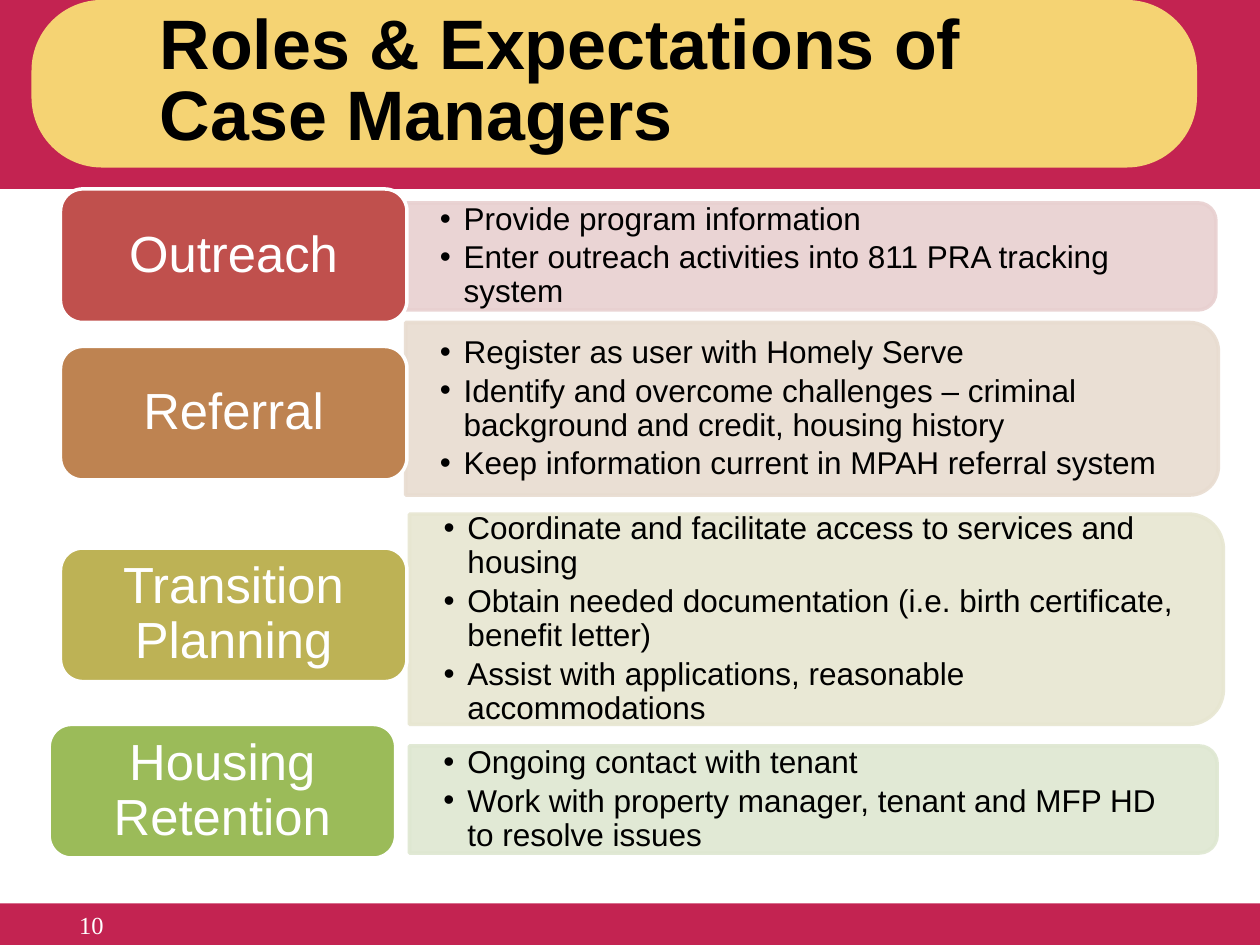
import pptx
import pptx.util
import pptx.dml.color
import pptx.enum.shapes
import pptx.enum.text
import lxml.etree

Inches, Pt = pptx.util.Inches, pptx.util.Pt
SHAPE = pptx.enum.shapes.MSO_SHAPE
ALIGN = pptx.enum.text.PP_ALIGN
ANCHOR = pptx.enum.text.MSO_ANCHOR
qn = pptx.oxml.ns.qn

COLORS = {"band": "C32351", "banner": "F5D373", "white": "FFFFFF", "black": "000000"}
TITLE = "Roles & Expectations of Case Managers"
PAGE = "10"
ROLES = [
    {"name": "Outreach", "color": "C0504D", "tint": "E8D0D0",
     "label": (0.48, 1.5), "panel": (3.22, 1.61, 6.43, 0.85),
     "duties": ["Provide program information",
                "Enter outreach activities into 811 PRA tracking system"]},
    {"name": "Referral", "color": "BE8351", "tint": "E8DCD0",
     "label": (0.48, 2.75), "panel": (3.22, 2.56, 6.45, 1.37),
     "duties": ["Register as user with Homely Serve",
                "Identify and overcome challenges – criminal background and credit, housing history",
                "Keep information current in MPAH referral system"]},
    {"name": "Transition Planning", "color": "BDB255", "tint": "E7E6D1",
     "label": (0.48, 4.35), "panel": (3.25, 4.08, 6.46, 1.67),
     "duties": ["Coordinate and facilitate access to services and housing",
                "Obtain needed documentation (i.e. birth certificate, benefit letter)",
                "Assist with applications, reasonable accommodations"]},
    {"name": "Housing Retention", "color": "9BBB59", "tint": "DEE7D1",
     "label": (0.39, 5.75), "panel": (3.25, 5.92, 6.41, 0.85),
     "duties": ["Ongoing contact with tenant",
                "Work with property manager, tenant and MFP HD to resolve issues"]},
]
LABEL_W, LABEL_H = 2.75, 1.06

prs = pptx.Presentation()
prs.slide_width, prs.slide_height = Inches(10), Inches(7.5)
s = prs.slides.add_slide(prs.slide_layouts[6])


def rgb(color):
    return pptx.dml.color.RGBColor.from_string(color)


def add_shape(kind, box, fill, line=None):
    sp = s.shapes.add_shape(kind, *map(Inches, box))
    sp.shadow.inherit = False
    sp.fill.solid()
    sp.fill.fore_color.rgb = rgb(fill)
    if line:
        sp.line.color.rgb = rgb(line)
        sp.line.width = Pt(2)
    else:
        sp.line.fill.background()
    return sp


def add_panel(box, tint):
    x, y, w, h = box
    upright = (x + (w - h) / 2, y + (h - w) / 2, h, w)
    sp = add_shape(SHAPE.ROUND_2_SAME_RECTANGLE, upright, tint, tint)
    sp.rotation = 90
    for color in sp._element.spPr.iter(qn("a:srgbClr")):
        lxml.etree.SubElement(color, qn("a:alpha"), val="90000")


def add_bullet(p):
    pPr = p._p.get_or_add_pPr()
    pPr.set("marL", str(Inches(0.19)))
    pPr.set("indent", str(-Inches(0.19)))
    lxml.etree.SubElement(pPr, qn("a:buFont"), typeface="Arial")
    lxml.etree.SubElement(pPr, qn("a:buChar"), char="•")


def write(sp, lines, size, color, font="Arial", bold=False, align=ALIGN.LEFT,
          anchor=ANCHOR.MIDDLE, inset=(0.1, 0.05), spacing=None, after=0, bullets=False):
    tf = sp.text_frame
    tf.word_wrap = True
    tf.vertical_anchor = anchor
    tf.margin_left = tf.margin_right = Inches(inset[0])
    tf.margin_top = tf.margin_bottom = Inches(inset[1])
    for i, line in enumerate(lines):
        p = tf.add_paragraph() if i else tf.paragraphs[0]
        p.alignment = align
        p.line_spacing = spacing
        p.space_after = Pt(after)
        if bullets:
            add_bullet(p)
        r = p.add_run()
        r.text = line
        r.font.name, r.font.size, r.font.bold = font, Pt(size), bold
        r.font.color.rgb = rgb(color)


def add_text(box, lines, size, color, **style):
    write(s.shapes.add_textbox(*map(Inches, box)), lines, size, color, **style)


add_shape(SHAPE.RECTANGLE, (0, 0, 10, 1.5), COLORS["band"])
add_shape(SHAPE.RECTANGLE, (0, 7.17, 10, 0.33), COLORS["band"])
banner = add_shape(SHAPE.ROUNDED_RECTANGLE, (0.25, 0, 9.25, 1.33), COLORS["banner"])
banner.adjustments[0] = 0.42

for role in ROLES:
    x, y, w, h = role["panel"]
    add_panel(role["panel"], role["tint"])
    add_text((x, y + 0.04, w - 0.04, h - 0.08), role["duties"], 18, COLORS["black"],
             inset=(0.27, 0.14), spacing=0.9, after=2.7, bullets=True)
    label = add_shape(SHAPE.ROUNDED_RECTANGLE, (*role["label"], LABEL_W, LABEL_H),
                      role["color"], COLORS["white"])
    write(label, [role["name"]], 29, COLORS["white"], align=ALIGN.CENTER,
          inset=(0.12, 0.06), spacing=0.9)

add_text((1.17, 0.08, 8, 1.17), [TITLE], 40, COLORS["black"], bold=True, spacing=0.85)
add_text((0, 7.17, 0.92, 0.5), [PAGE], 14, COLORS["white"], font="Times New Roman",
         align=ALIGN.RIGHT, anchor=ANCHOR.TOP)

prs.save("out.pptx")
